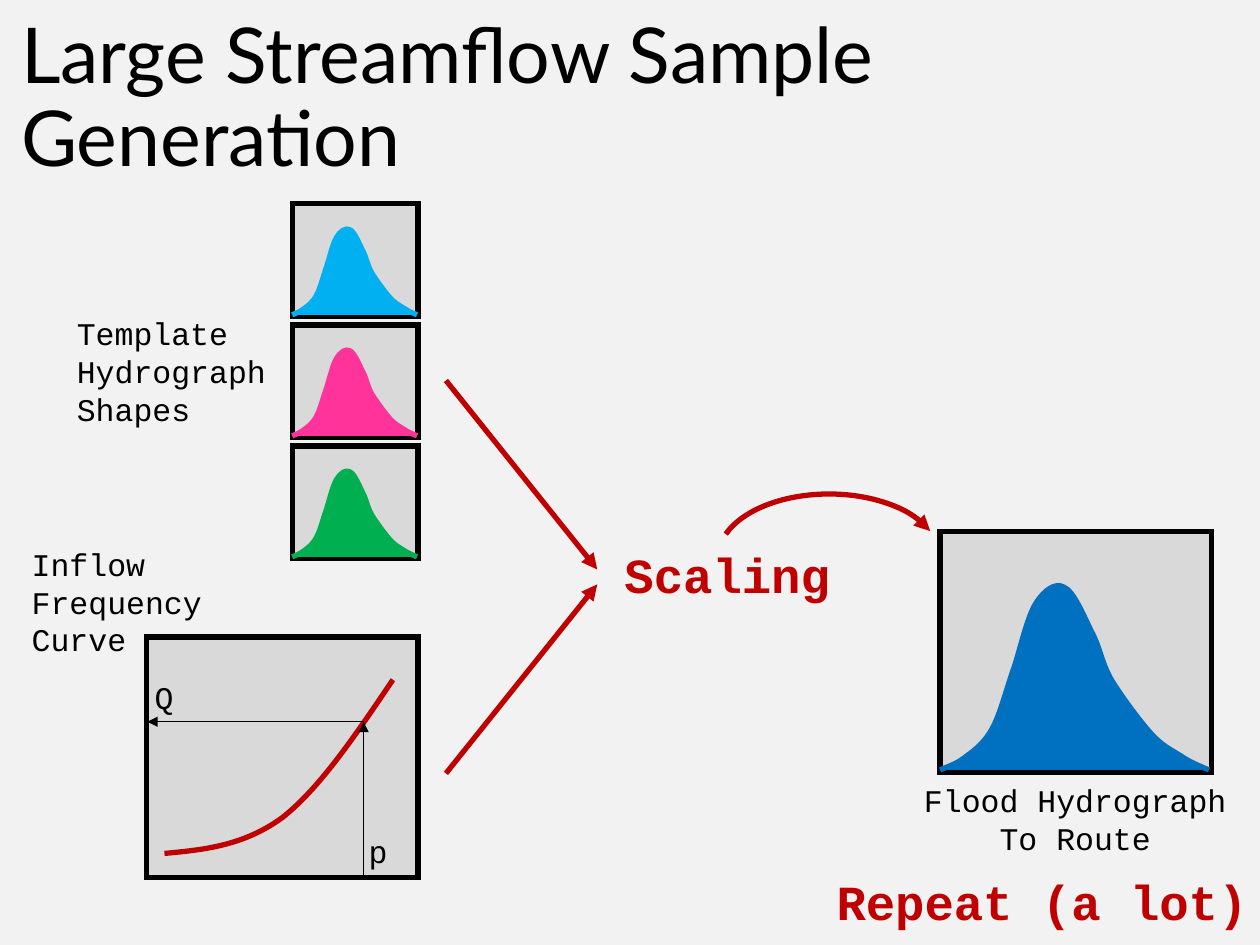
from pptx import Presentation
from pptx.dml.color import RGBColor
from pptx.enum.shapes import MSO_CONNECTOR as Link, MSO_SHAPE as Preset
from pptx.enum.text import MSO_ANCHOR as Anchor, MSO_AUTO_SIZE as Fit, PP_ALIGN as Align
from pptx.oxml.ns import qn
from pptx.util import Cm, Pt
from lxml.etree import SubElement


class Theme:
    background, panel, ink, accent = "F2F2F2", "D9D9D9", "000000", "C00000"
    flood = "0070C0"
    templates = ["00B0F0", "FF3399", "00B050"]
    title_font, body_font = "Lato", "Courier New"
    title_size, label_size, step_size = 44, 18, 28
    thick, thin = 3, 0.5


# Content: text lines, then left, top, width, height in cm
TITLE = "Large Streamflow Sample Generation"
FLOOD_LABEL = (["Flood Hydrograph", "To Route"], (18.32, 15.63, 6.71, 1.8))
TEMPLATE_LABEL = (["Template Hydrograph Shapes"], (1.3, 6.21, 4.57, 2.57))
FREQUENCY_LABEL = (["Inflow", "Frequency", "Curve"], (0.39, 10.86, 5.92, 2.57))
AXIS_LABELS = [(["p"], (7.18, 16.64, 0.89, 1.02)), (["Q"], (2.87, 13.54, 0.89, 1.02))]
SCALING_STEP = (["Scaling"], (12.34, 10.85, 5.92, 1.45))
REPEAT_STEP = (["Repeat (a lot)"], (15.75, 17.45, 9.65, 1.45))

# Panels in cm
FLOOD_PANEL = (18.95, 10.72, 5.47, 4.85)
FREQUENCY_PANEL = (2.96, 12.84, 5.47, 4.85)
TEMPLATE_PANEL = (5.89, 4.11, 2.54, 2.26)
TEMPLATE_PITCH = 2.44

# Bezier points in percent of the panel: a start, then three per segment
HYDROGRAPH = [
    (0, 99),
    (3.3, 97.4), (6.5, 96.3), (9.8, 93.2),
    (13, 90.6), (16.7, 87.4), (19.5, 81.2),
    (22.3, 75.4), (24.7, 64.4), (27.4, 56),
    (29.8, 47.6), (32.1, 35.6), (35.3, 29.8),
    (38.1, 24.6), (42.3, 20.9), (45.6, 23),
    (49.3, 24.6), (53, 35.1), (55.8, 41.4),
    (59.1, 48.2), (59.5, 54.5), (63.3, 61.8),
    (67, 68.6), (73.5, 78.5), (77.7, 83.8),
    (81.9, 89), (85.1, 90.6), (88.8, 93.2),
    (92.1, 95.8), (95.8, 97.4), (99.1, 99),
]
FREQUENCY = [
    (6.5, 90),
    (20.9, 88.5), (35.8, 86.9), (50.2, 74.9),
    (64.2, 62.3), (77.2, 40.3), (90.7, 17.8),
]

# Arrows in cm: start, end
SCALING_ARROWS = [((8.99, 7.67), (12.04, 11.48)), ((8.99, 15.59), (12.04, 11.78))]
READING_ARROWS = [((7.33, 14.55), (2.97, 14.55)), ((7.33, 17.63), (7.33, 14.55))]
ARC_BOX, ARC_ANGLES = (14.48, 9.96, 4.47, 2.54), (115.49, 207.37)


def cm(values):
    return [Cm(value) for value in values]


def paint(shape, fill, line):
    shape.shadow.inherit = False
    if fill:
        shape.fill.solid()
        shape.fill.fore_color.rgb = RGBColor.from_string(fill)
    else:
        shape.fill.background()
    stroke(shape, line, Theme.thick)


def stroke(shape, color, width):
    shape.line.color.rgb = RGBColor.from_string(color)
    shape.line.width = Pt(width)


def extend_outline(shape, tag, **options):
    SubElement(shape.element.spPr.find(qn("a:ln")), qn(tag), **options)


def add_arrow(shapes, start, end, color, width):
    arrow = shapes.add_connector(Link.STRAIGHT, *cm(start + end))
    stroke(arrow, color, width)
    extend_outline(arrow, "a:tailEnd", type="triangle")
    SubElement(arrow.element.spPr, qn("a:effectLst"))


def add_panel(shapes, box):
    panel = shapes.add_shape(Preset.RECTANGLE, *cm(box))
    paint(panel, Theme.panel, Theme.ink)
    extend_outline(panel, "a:miter", lim="800000")


def add_curve(shapes, box, points, fill, line):
    left, top, width, height = box
    start, *rest = [(Cm(left + x * width / 100), Cm(top + y * height / 100))
                    for x, y in points]
    builder = shapes.build_freeform(*start)
    builder.add_line_segments(rest, close=False)
    curve = builder.convert_to_shape()
    paint(curve, fill, line)
    # Join each three points into one cubic segment
    outline = next(curve.element.iter(qn("a:path")))
    lines = outline.findall(qn("a:lnTo"))
    for first in range(0, len(lines), 3):
        segment = SubElement(outline, qn("a:cubicBezTo"))
        for straight in lines[first:first + 3]:
            segment.append(straight[0])
            outline.remove(straight)


def add_hydrograph(shapes, box, color):
    add_panel(shapes, box)
    add_curve(shapes, box, HYDROGRAPH, color, color)


def write(para, words, font, size, color, bold=False):
    span = para.add_run()
    span.text = words
    span.font.name, span.font.size, span.font.bold = font, Pt(size), bold
    span.font.color.rgb = RGBColor.from_string(color)


def add_text(shapes, lines, box, align=Align.LEFT, wrap=True,
             size=Theme.label_size, color=Theme.ink, bold=False):
    frame = shapes.add_textbox(*cm(box)).text_frame
    frame.word_wrap = wrap
    frame.auto_size = Fit.SHAPE_TO_FIT_TEXT
    for index, line in enumerate(lines):
        para = frame.add_paragraph() if index else frame.paragraphs[0]
        para.alignment = align
        write(para, line, Theme.body_font, size, color, bold)


def add_step(shapes, lines, box, align):
    add_text(shapes, lines, box, align, size=Theme.step_size, color=Theme.accent, bold=True)


def main():
    deck = Presentation()
    deck.slide_width, deck.slide_height = cm((25.4, 19.05))
    page = deck.slides.add_slide(deck.slide_layouts[5])
    page.background.fill.solid()
    page.background.fill.fore_color.rgb = RGBColor.from_string(Theme.background)
    shapes = page.shapes

    # Title
    title = shapes.title
    title.left, title.top, title.width, title.height = cm((0.17, 0.18, 21.89, 3.68))
    frame = title.text_frame
    frame.vertical_anchor, frame.auto_size = Anchor.MIDDLE, Fit.NONE
    para = frame.paragraphs[0]
    para.alignment, para.line_spacing = Align.LEFT, 0.9
    write(para, TITLE, Theme.title_font, Theme.title_size, Theme.ink)

    # Flood hydrograph
    add_hydrograph(shapes.add_group_shape().shapes, FLOOD_PANEL, Theme.flood)
    add_text(shapes, *FLOOD_LABEL, Align.CENTER, wrap=False)

    # Arrows into the scaling step
    for start, end in SCALING_ARROWS:
        add_arrow(shapes, start, end, Theme.accent, Theme.thick)

    # Template hydrographs
    templates = shapes.add_group_shape().shapes
    left, top, width, height = TEMPLATE_PANEL
    for row, color in enumerate(Theme.templates):
        add_hydrograph(templates, (left, top + row * TEMPLATE_PITCH, width, height), color)
    add_text(shapes, *TEMPLATE_LABEL)

    # Inflow frequency curve with its reading lines
    frequency = shapes.add_group_shape().shapes
    add_panel(frequency, FREQUENCY_PANEL)
    add_curve(frequency, FREQUENCY_PANEL, FREQUENCY, None, Theme.accent)
    for start, end in READING_ARROWS:
        add_arrow(frequency, start, end, Theme.ink, Theme.thin)
    for letter, box in AXIS_LABELS:
        add_text(frequency, letter, box, wrap=False)
    add_text(shapes, *FREQUENCY_LABEL)

    # Scaling step, its arc and the repeat note
    add_step(shapes, *SCALING_STEP, Align.LEFT)
    arc = shapes.add_shape(Preset.ARC, *cm(ARC_BOX))
    arc.adjustments[0], arc.adjustments[1] = ARC_ANGLES
    paint(arc, None, Theme.accent)
    extend_outline(arc, "a:tailEnd", type="triangle")
    add_step(shapes, *REPEAT_STEP, Align.RIGHT)

    deck.save("out.pptx")


if __name__ == "__main__":
    main()
